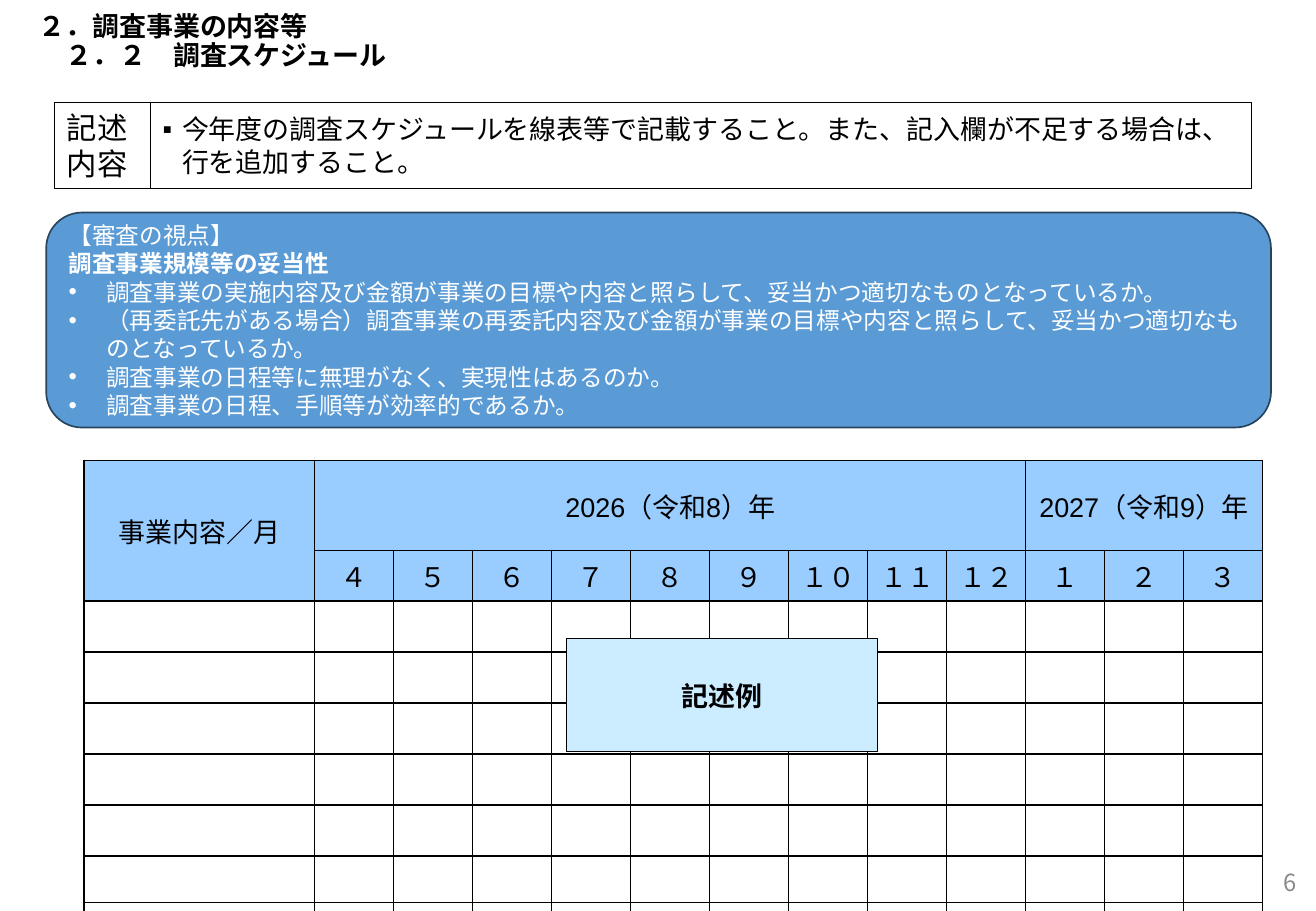
from pptx import Presentation
from pptx.util import Inches, Pt
from pptx.dml.color import RGBColor
from pptx.enum.shapes import MSO_SHAPE
from pptx.enum.text import MSO_ANCHOR, PP_ALIGN
from pptx.oxml.ns import qn
from lxml.etree import SubElement

COLORS = {"black": "000000", "white": "FFFFFF", "gray": "898989",
          "head": "99CCFF", "pale": "CCECFF", "blue": "5B9BD5", "navy": "28445D"}
SANS = "Noto Sans CJK JP"


def rgb(name):
    return RGBColor.from_string(COLORS[name])


def write(frame, lines, size, color="black", align=PP_ALIGN.LEFT, face=SANS):
    """Fill a text frame from (text, bold, bullet, indent) lines."""
    frame.word_wrap = True
    for num, (text, bold, mark, indent) in enumerate(lines):
        para = frame.paragraphs[0] if num == 0 else frame.add_paragraph()
        para.text = text
        para.alignment = align
        if mark:
            props = para._p.get_or_add_pPr()
            props.set("marL", str(Inches(indent)))
            props.set("indent", str(-Inches(indent)))
            SubElement(props, qn("a:buFont")).set("typeface", "Arial")
            SubElement(props, qn("a:buChar")).set("char", mark)
        for run in para.runs:
            style = {"size": Pt(size), "bold": bold, "name": face}
            for key, value in style.items():
                setattr(run.font, key, value)
            run.font.color.rgb = rgb(color)
            SubElement(run._r.get_or_add_rPr(), qn("a:ea")).set("typeface", SANS)


deck = Presentation()
deck.slide_width, deck.slide_height = Inches(10.83), Inches(7.5)
slide = deck.slides.add_slide(deck.slide_layouts[6])

# Title and page number
labels = [
    ((0.22, 0.05, 10.4, 0.6), "２．調査事業の内容等\v　２．２　調査スケジュール", 16, True,
     "black", PP_ALIGN.LEFT, MSO_ANCHOR.MIDDLE, 0.9),
    ((7.81, 7.22, 2.96, 0.21), "6", 14, False,
     "gray", PP_ALIGN.RIGHT, MSO_ANCHOR.BOTTOM, 1.0),
]
for place, text, size, bold, color, align, anchor, space in labels:
    frame = slide.shapes.add_textbox(*map(Inches, place)).text_frame
    write(frame, [(text, bold, None, 0)], size, color, align)
    frame.vertical_anchor = anchor
    frame.paragraphs[0].line_spacing = space

# Schedule table
months = "４ ５ ６ ７ ８ ９ １０ １１ １２ １ ２ ３".split()
heights = [0.74] + [0.42] * 6 + [0.38] * 2
table = slide.shapes.add_table(
    len(heights), 13, Inches(0.69), Inches(3.79), Inches(9.7), Inches(sum(heights))).table
table.first_row = table.horz_banding = False
for row, height in zip(table.rows, heights):
    row.height = Inches(height)
for num, col in enumerate(table.columns):
    col.width = Inches(0.65 if num else 1.9)

heads = {(0, 0): "事業内容／月", (0, 1): "2026（令和8）年", (0, 10): "2027（令和9）年"}
heads.update({(1, num): month for num, month in enumerate(months, 1)})
layout = {"margin_left": Inches(0.06), "margin_right": Inches(0.06),
          "margin_top": Inches(0.01), "margin_bottom": Inches(0.01),
          "vertical_anchor": MSO_ANCHOR.MIDDLE}
for r in range(len(heights)):
    for c in range(13):
        cell = table.cell(r, c)
        for key, value in layout.items():
            setattr(cell, key, value)
        # Borders come before the fill in the cell properties
        props = cell._tc.get_or_add_tcPr()
        for side in ("lnL", "lnR", "lnT", "lnB"):
            edge = SubElement(props, qn("a:" + side), w=str(Pt(1)))
            paint = SubElement(edge, qn("a:solidFill"))
            SubElement(paint, qn("a:srgbClr")).set("val", COLORS["black"])
        if r < 2:
            cell.fill.solid()
            cell.fill.fore_color.rgb = rgb("head")
        else:
            cell.fill.background()
        if (r, c) in heads:
            write(cell.text_frame, [(heads[r, c], False, None, 0)], 16,
                  align=PP_ALIGN.CENTER, face="Arial")
for start, end in [((0, 0), (1, 0)), ((0, 1), (0, 9)), ((0, 10), (0, 12))]:
    table.cell(*start).merge(table.cell(*end))

# Instruction boxes, sample label and review panel
group = slide.shapes.add_group_shape()
task = "今年度の調査スケジュールを線表等で記載すること。また、記入欄が不足する場合は、行を追加すること。"
points = [
    "調査事業の実施内容及び金額が事業の目標や内容と照らして、妥当かつ適切なものとなっているか。",
    "（再委託先がある場合）調査事業の再委託内容及び金額が事業の目標や内容と照らして、妥当かつ適切なものとなっているか。",
    "調査事業の日程等に無理がなく、実現性はあるのか。",
    "調査事業の日程、手順等が効率的であるか。",
]
review = [("【審査の視点】", False, None, 0), ("調査事業規模等の妥当性", True, None, 0)]
review += [(point, False, "•", 0.31) for point in points]
RECT, ROUND = MSO_SHAPE.RECTANGLE, MSO_SHAPE.ROUNDED_RECTANGLE
boxes = [
    (group, RECT, (1.24, 0.84, 9.06, 0.71), "white", "black", 0.5,
     [(task, False, "▪", 0.16)], 16, "black", PP_ALIGN.LEFT),
    (group, RECT, (0.45, 0.84, 0.79, 0.71), "white", "black", 0.5,
     [("記述内容", False, None, 0)], 18, "black", PP_ALIGN.LEFT),
    (slide, RECT, (4.66, 5.26, 2.56, 0.93), "pale", "black", 0.5,
     [("記述例", True, None, 0)], 16, "black", PP_ALIGN.CENTER),
    (slide, ROUND, (0.38, 1.75, 10.08, 1.77), "blue", "navy", 1,
     review, 14, "white", PP_ALIGN.LEFT),
]
for home, kind, place, fill, line, width, lines, size, color, align in boxes:
    box = home.shapes.add_shape(kind, *map(Inches, place))
    box.shadow.inherit = False
    box.fill.solid()
    box.fill.fore_color.rgb = rgb(fill)
    box.line.color.rgb = rgb(line)
    box.line.width = Pt(width)
    box.text_frame.vertical_anchor = MSO_ANCHOR.MIDDLE
    write(box.text_frame, lines, size, color, align)

deck.save("out.pptx")
